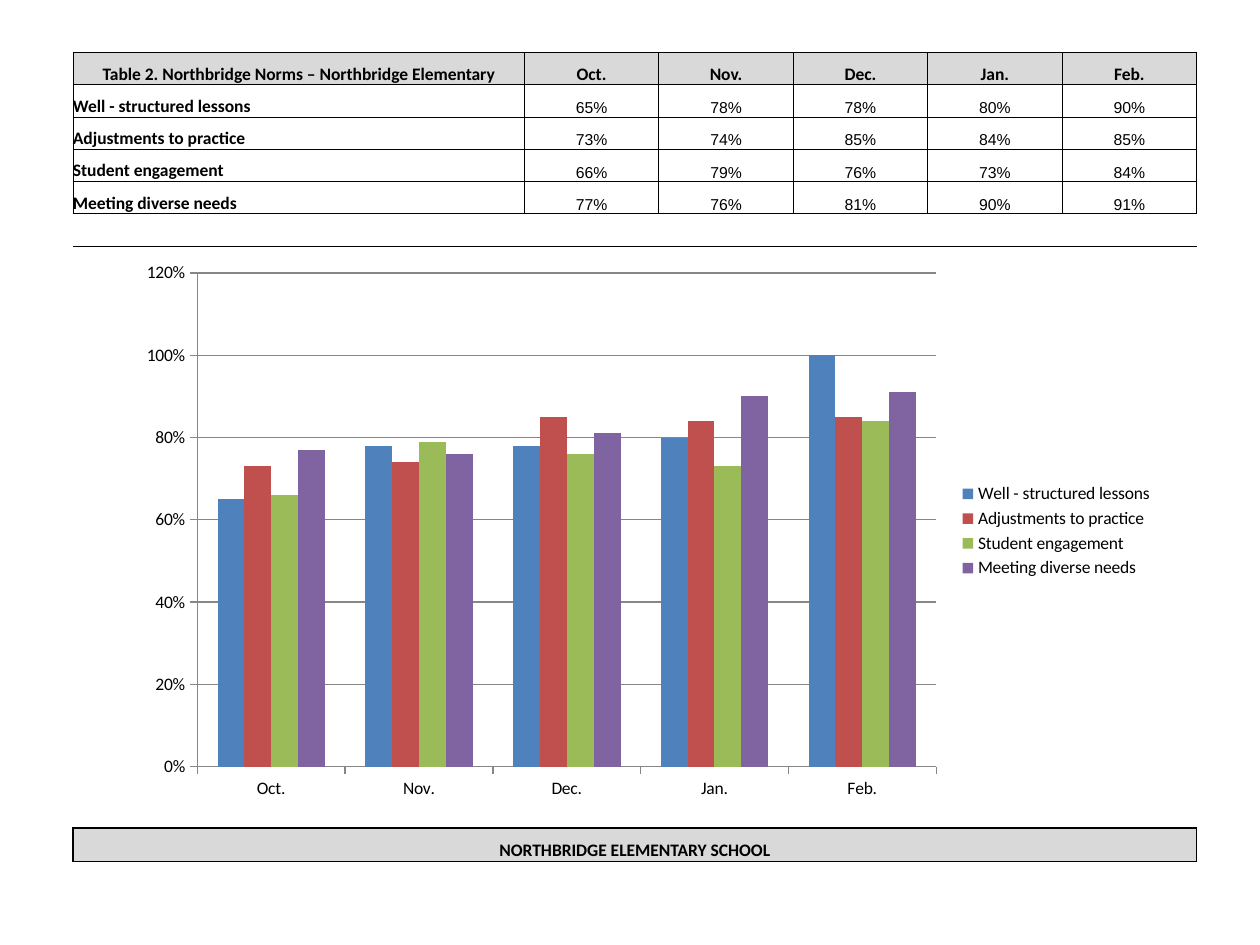
from dataclasses import dataclass

from lxml import etree
from pptx import Presentation
from pptx.chart.data import CategoryChartData
from pptx.dml.color import RGBColor
from pptx.enum.chart import XL_CHART_TYPE, XL_LEGEND_POSITION, XL_TICK_MARK
from pptx.enum.text import MSO_ANCHOR, PP_ALIGN
from pptx.oxml.ns import qn
from pptx.util import Cm, Pt

COLUMN = XL_CHART_TYPE.COLUMN_CLUSTERED
LEGEND_RIGHT = XL_LEGEND_POSITION.RIGHT
TICK_OUT = XL_TICK_MARK.OUTSIDE
BOTTOM = MSO_ANCHOR.BOTTOM
LEFT, CENTER = PP_ALIGN.LEFT, PP_ALIGN.CENTER

TITLE = "Table 2. Northbridge Norms – Northbridge Elementary"
SCHOOL = "NORTHBRIDGE ELEMENTARY SCHOOL"
MONTHS = ["Oct.", "Nov.", "Dec.", "Jan.", "Feb."]
NORMS = {
    "Well - structured lessons": [65, 78, 78, 80, 90],
    "Adjustments to practice": [73, 74, 85, 84, 85],
    "Student engagement": [66, 79, 76, 73, 84],
    "Meeting diverse needs": [77, 76, 81, 90, 91],
}
PLOTTED = NORMS | {"Well - structured lessons": [65, 78, 78, 80, 100]}

ROW_COUNT = 25
LABEL_WIDTH, MONTH_WIDTH = 9.1, 2.71
ROW_HEIGHT, LAST_HEIGHT = 0.65, 0.68
TABLE_LEFT, TABLE_TOP = 1.47, 1.06
CHART_BOX = (2.54, 5.08, 20.96, 11.25)
NO_STYLE = "{2D5ABB26-0587-4C30-8999-92F81FD0307C}"


@dataclass(frozen=True)
class Theme:
    ink: str = "000000"
    band: str = "D9D9D9"
    axis: str = "868686"
    series: tuple = ("4F81BD", "C0504D", "9BBB59", "8064A2")
    label_font: str = "Calibri"
    value_font: str = "Arial"
    label_size: int = 10
    value_size: int = 9
    thin: float = 0.5
    thick: float = 1


THEME = Theme()


def style_font(font, name, size, bold=False):
    font.name, font.size, font.bold = name, Pt(size), bold
    font.color.rgb = RGBColor.from_string(THEME.ink)


def add_borders(cell, sides, width):
    properties = cell._tc.get_or_add_tcPr()
    for side in sides:
        line = etree.SubElement(properties, qn(f"a:ln{side}"), w=str(Pt(width)))
        fill = etree.SubElement(line, qn("a:solidFill"))
        etree.SubElement(fill, qn("a:srgbClr"), val=THEME.ink)


def prepare_cell(cell, sides="", width=THEME.thin, band=False):
    cell.margin_left = cell.margin_right = cell.margin_top = cell.margin_bottom = 0
    cell.vertical_anchor = BOTTOM
    add_borders(cell, sides, width)
    if band:
        cell.fill.solid()
        cell.fill.fore_color.rgb = RGBColor.from_string(THEME.band)
    else:
        cell.fill.background()


def write_cell(cell, text, align=CENTER, value=False):
    para = cell.text_frame.paragraphs[0]
    para.text = text
    para.alignment = align
    for span in para.runs:
        if value:
            style_font(span.font, THEME.value_font, THEME.value_size)
        else:
            style_font(span.font, THEME.label_font, THEME.label_size, True)


def shrink_blank(cell):
    para = cell.text_frame.paragraphs[0]
    etree.SubElement(para._p, qn("a:endParaRPr"), sz=str(THEME.label_size * 100))


def add_norms_table(page):
    widths = [LABEL_WIDTH] + [MONTH_WIDTH] * len(MONTHS)
    heights = [ROW_HEIGHT] * (ROW_COUNT - 2) + [LAST_HEIGHT] * 2
    frame = page.shapes.add_table(
        ROW_COUNT, len(widths), Cm(TABLE_LEFT), Cm(TABLE_TOP),
        Cm(sum(widths)), Cm(sum(heights)))
    table = frame.table
    table.first_row = table.horz_banding = False
    table._tbl.tblPr.find(qn("a:tableStyleId")).text = NO_STYLE
    for column, width in zip(table.columns, widths):
        column.width = Cm(width)
    for row, height in zip(table.rows, heights):
        row.height = Cm(height)

    rows = [[TITLE] + MONTHS]
    rows += [[name] + [f"{score}%" for score in scores] for name, scores in NORMS.items()]
    last = ROW_COUNT - 1
    borders = {len(rows): ("T", THEME.thin), last - 1: ("B", THEME.thick),
               last: ("LRTB", THEME.thick)}
    borders |= {index: ("LRTB", THEME.thin) for index in range(len(rows))}
    for r in range(ROW_COUNT):
        sides, width = borders.get(r, ("", THEME.thin))
        for c in range(len(widths)):
            cell = table.cell(r, c)
            prepare_cell(cell, sides, width, band=r in (0, last))
            if r < len(rows):
                write_cell(cell, rows[r][c], LEFT if r and not c else CENTER, bool(r and c))
            elif (r, c) != (last, 0):
                shrink_blank(cell)
    school = table.cell(last, 0)
    school.merge(table.cell(last, len(widths) - 1))
    write_cell(school, SCHOOL)


def style_axis(axis):
    axis.major_tick_mark = TICK_OUT
    axis.format.line.color.rgb = RGBColor.from_string(THEME.axis)
    axis.format.line.width = Pt(0.75)


def add_norms_chart(page):
    data = CategoryChartData(number_format="0%")
    data.categories = MONTHS
    for name, scores in PLOTTED.items():
        data.add_series(name, [score / 100 for score in scores])
    chart = page.shapes.add_chart(COLUMN, *map(Cm, CHART_BOX), data).chart
    style_font(chart.font, THEME.label_font, THEME.label_size)
    chart.has_title = False
    chart.has_legend = True
    chart.legend.position = LEGEND_RIGHT
    chart.legend.include_in_layout = False

    plot = chart.plots[0]
    plot.gap_width, plot.overlap, plot.vary_by_categories = 150, 0, False
    for series, color in zip(plot.series, THEME.series):
        series.format.fill.solid()
        series.format.fill.fore_color.rgb = RGBColor.from_string(color)

    style_axis(chart.category_axis)
    scale = chart.value_axis
    style_axis(scale)
    scale.minimum_scale, scale.maximum_scale, scale.major_unit = 0, 1.2, 0.2
    scale.tick_labels.number_format = "0%"
    scale.tick_labels.number_format_is_linked = False
    scale.has_major_gridlines = True
    grid = scale.major_gridlines.format.line
    grid.color.rgb = RGBColor.from_string(THEME.axis)
    grid.width = Pt(0.75)


def main():
    """Build the school norms slide with its table and chart."""
    deck = Presentation()
    deck.slide_width, deck.slide_height = Cm(25.4), Cm(19.05)
    page = deck.slides.add_slide(deck.slide_layouts[6])
    add_norms_table(page)
    add_norms_chart(page)
    deck.save("out.pptx")


if __name__ == "__main__":
    main()
